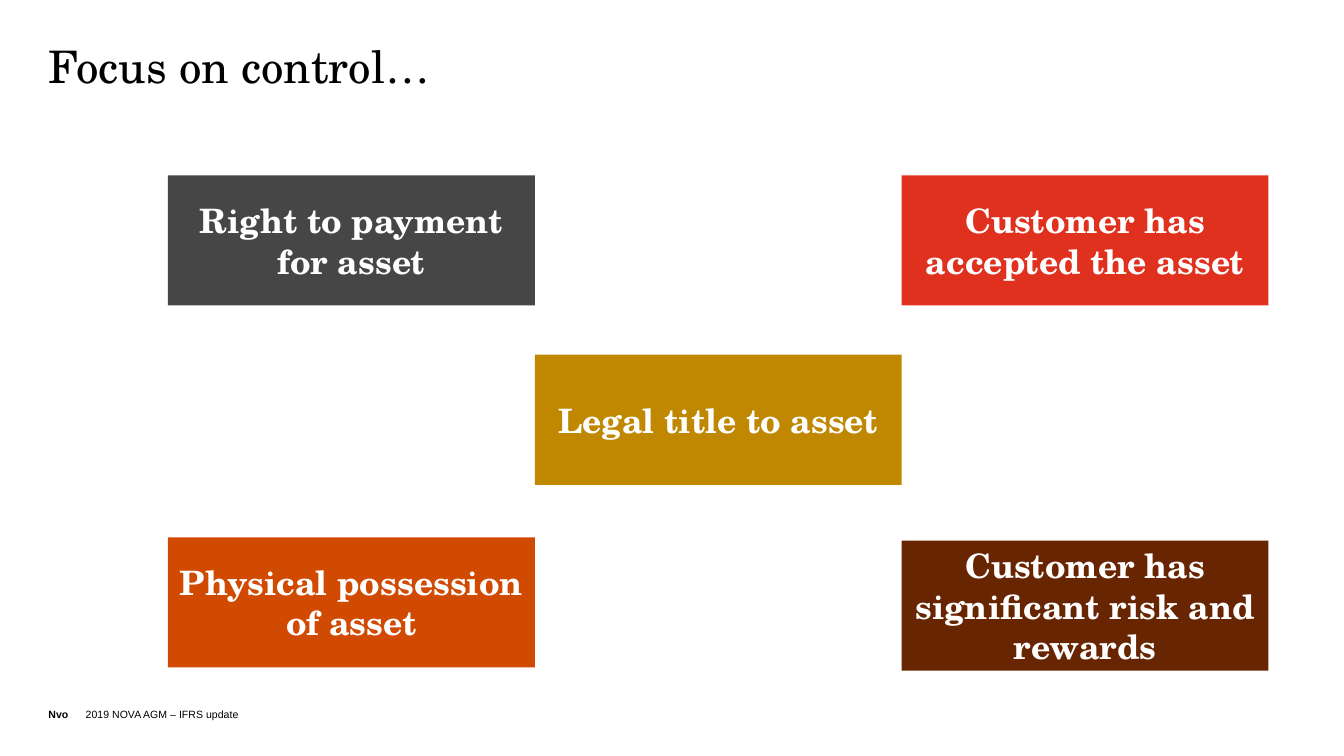
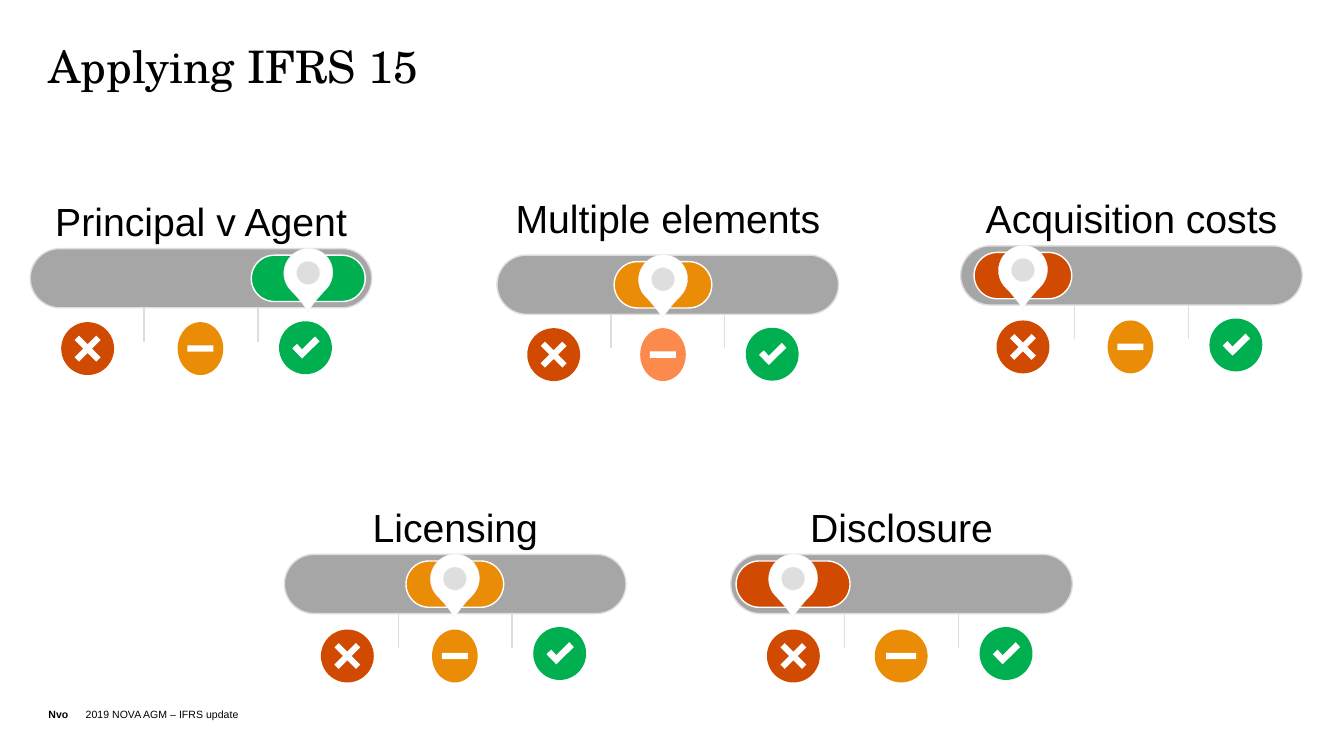
from collections import namedtuple
from dataclasses import dataclass

from lxml import etree
from pptx import Presentation
from pptx.dml.color import RGBColor
from pptx.enum.shapes import MSO_CONNECTOR as Connector, MSO_SHAPE as Shape
from pptx.enum.text import MSO_ANCHOR as Anchor, MSO_AUTO_SIZE as AutoSize, PP_ALIGN as Align
from pptx.oxml.ns import qn
from pptx.util import Pt


@dataclass(frozen=True)
class Theme:
    serif: str = "TeX Gyre Schola"
    sans: str = "Arial"
    title_size: float = 32
    label_size: float = 28
    box_size: float = 24
    footer_size: float = 7.5
    black: str = "000000"
    white: str = "FFFFFF"
    charcoal: str = "464646"
    track: str = "A6A6A6"
    hairline: str = "DEDEDE"
    pin_edge: str = "F2F2F2"
    gold: str = "BF8800"
    orange: str = "D04A02"
    brown: str = "682501"
    red: str = "E0301E"
    amber: str = "EB8C06"
    peach: str = "FD8A4D"
    green: str = "00B050"


theme = Theme()


def write(shape, text, size, font=theme.sans, color=theme.black, bold=False, align=Align.LEFT,
          anchor=Anchor.TOP, margins=(0, 0), wrap=True, auto_size=AutoSize.NONE,
          line_spacing=None, space_after=0):
    frame = shape.text_frame
    frame.word_wrap = wrap
    frame.auto_size = auto_size
    frame.vertical_anchor = anchor
    frame.margin_left = frame.margin_right = Pt(margins[0])
    frame.margin_top = frame.margin_bottom = Pt(margins[1])
    paragraph = frame.paragraphs[0]
    paragraph.alignment = align
    paragraph.line_spacing = line_spacing
    paragraph.space_after = Pt(space_after)
    run = paragraph.add_run()
    run.text = text
    run.font.name = font
    run.font.size = Pt(size)
    run.font.bold = bold
    run.font.color.rgb = RGBColor.from_string(color)


def paint(shape, fill, line=None, weight=1):
    shape.shadow.inherit = False
    shape.fill.solid()
    shape.fill.fore_color.rgb = RGBColor.from_string(fill)
    if line:
        shape.line.color.rgb = RGBColor.from_string(line)
        shape.line.width = Pt(weight)
    else:
        shape.line.fill.background()


presentation = Presentation()
presentation.slide_width = Pt(960)
presentation.slide_height = Pt(540)
layout = presentation.slide_layouts[5]

for placeholder in list(layout.placeholders):
    if placeholder.placeholder_format.idx == 0:
        placeholder.left, placeholder.top = Pt(34.6), Pt(33.8)
        placeholder.width, placeholder.height = Pt(890), Pt(109.4)
    else:
        layout.shapes.element.remove(placeholder.element)

control_slide, applying_slide = [presentation.slides.add_slide(layout) for _ in range(2)]
for slide, title in ((control_slide, "Focus on control…"), (applying_slide, "Applying IFRS 15")):
    write(slide.shapes.title, title, theme.title_size, font=theme.serif, line_spacing=0.85)

footers = []
for text, left, width, bold in (("Nvo", 34.6, 24, True),
                                ("2019 NOVA AGM – IFRS update", 61.2, 404.6, False)):
    footer = control_slide.shapes.add_textbox(Pt(left), Pt(504), Pt(width), Pt(10.8))
    write(footer, text, theme.footer_size, bold=bold, anchor=Anchor.BOTTOM)
    footers.append(footer)
for footer in footers:
    layout.shapes.element.append(footer.element)

BOX_LEFT, BOX_WIDTH, BOX_HEIGHT = 120, 262, 92.9
for text, column, top, fill in (
    ("Right to payment for asset", 0, 125.3, theme.charcoal),
    ("Legal title to asset", 1, 253.4, theme.gold),
    ("Physical possession of asset", 0, 383.8, theme.orange),
    ("Customer has significant risk and rewards", 2, 386.2, theme.brown),
    ("Customer has accepted the asset", 2, 125.3, theme.red),
):
    box = control_slide.shapes.add_shape(
        Shape.RECTANGLE, Pt(BOX_LEFT + column * BOX_WIDTH), Pt(top), Pt(BOX_WIDTH), Pt(BOX_HEIGHT))
    paint(box, fill)
    write(box, text, theme.box_size, font=theme.serif, color=theme.white, bold=True,
          align=Align.CENTER, anchor=Anchor.MIDDLE, margins=(7.2, 3.6))

TRACK_WIDTH, TRACK_HEIGHT = 244, 42.3
DIVIDER_LENGTH = 24.3
KNOB_INSET, KNOB_HEIGHT = 4.7, 33.1
PIN_WIDTH, PIN_HEIGHT, PIN_DOT = 35.3, 34.6, 16.6
ICON_DIAMETER, NARROW_ICON = 37.8, 32.6
CROSS_SIZE, DASH_RATIO, DASH_HEIGHT = 21.8, 0.57, 4.6
TICK_X, TICK_DROP = 196.6, 70.8
TICK_OUTLINE = ((-2.4, 7.7), (-9.4, 0.5), (-6, -2.8), (-2.4, 1.2), (6.9, -8.1), (10.1, -4.6))

Slider = namedtuple("Slider", "label left top label_rise cross_x dash_x icon_drop "
                              "knob_x knob_width knob_fill dash_width dash_fill")
sliders = (
    Slider("Principal v Agent", 21.6, 177.6, 36.6, 41, 121.6, 71.4,
           198.6, 81.4, theme.green, NARROW_ICON, theme.amber),
    Slider("Acquisition costs", 686.2, 175.6, 36.6, 44.5, 121.3, 72.2,
           44.5, 69.8, theme.orange, NARROW_ICON, theme.amber),
    Slider("Disclosure", 522, 396, 36.6, 44.7, 121.7, 72.6,
           44.5, 81.4, theme.orange, ICON_DIAMETER, theme.amber),
    Slider("Multiple elements", 355, 182.2, 43.2, 40.5, 118.6, 71.1,
           118.6, 69.8, theme.amber, NARROW_ICON, theme.peach),
    Slider("Licensing", 203.2, 396, 36.6, 44.9, 121.7, 72.6,
           121.7, 69.8, theme.amber, NARROW_ICON, theme.amber),
)

shapes = applying_slide.shapes
for slider in sliders:
    scale_group = shapes.add_group_shape().shapes
    track = scale_group.add_shape(Shape.ROUNDED_RECTANGLE, Pt(slider.left), Pt(slider.top),
                                  Pt(TRACK_WIDTH), Pt(TRACK_HEIGHT))
    track.adjustments[0] = 0.5
    paint(track, theme.track, theme.hairline)
    for third in (1, 2):
        x = Pt(slider.left + third * TRACK_WIDTH / 3)
        bottom = slider.top + TRACK_HEIGHT
        divider = scale_group.add_connector(Connector.STRAIGHT, x, Pt(bottom),
                                            x, Pt(bottom + DIVIDER_LENGTH))
        divider.line.color.rgb = RGBColor.from_string(theme.hairline)
        divider.line.width = Pt(1)
        etree.SubElement(divider.element.spPr, qn("a:effectLst"))

    knob_center = slider.left + slider.knob_x
    knob = shapes.add_shape(Shape.ROUNDED_RECTANGLE, Pt(knob_center - slider.knob_width / 2),
                            Pt(slider.top + KNOB_INSET), Pt(slider.knob_width), Pt(KNOB_HEIGHT))
    knob.adjustments[0] = 0.5
    paint(knob, slider.knob_fill, theme.white)

    pin_group = shapes.add_group_shape().shapes
    pin = pin_group.add_shape(Shape.TEAR, Pt(knob_center - PIN_WIDTH / 2), Pt(slider.top),
                              Pt(PIN_WIDTH), Pt(PIN_HEIGHT))
    pin.adjustments[0] = 1.118
    pin.rotation = 135
    paint(pin, theme.white, theme.pin_edge, 0.25)
    dot = pin_group.add_shape(Shape.OVAL, Pt(knob_center - PIN_DOT / 2),
                              Pt(slider.top + (PIN_HEIGHT - PIN_DOT) / 2), Pt(PIN_DOT), Pt(PIN_DOT))
    paint(dot, theme.hairline, theme.pin_edge, 0.25)

    for kind, offset, drop, width, fill in (
        ("cross", slider.cross_x, slider.icon_drop, ICON_DIAMETER, theme.orange),
        ("dash", slider.dash_x, slider.icon_drop, slider.dash_width, slider.dash_fill),
        ("tick", TICK_X, TICK_DROP, ICON_DIAMETER, theme.green),
    ):
        center_x, center_y = slider.left + offset, slider.top + drop
        icon = shapes.add_group_shape().shapes
        disc = icon.add_shape(Shape.OVAL, Pt(center_x - width / 2),
                              Pt(center_y - ICON_DIAMETER / 2), Pt(width), Pt(ICON_DIAMETER))
        paint(disc, fill)
        if kind == "cross":
            glyph = icon.add_shape(Shape.CROSS, Pt(center_x - CROSS_SIZE / 2),
                                   Pt(center_y - CROSS_SIZE / 2), Pt(CROSS_SIZE), Pt(CROSS_SIZE))
            glyph.adjustments[0] = 0.4
            glyph.rotation = 45
        elif kind == "dash":
            dash_length = width * DASH_RATIO
            glyph = icon.add_shape(Shape.RECTANGLE, Pt(center_x - dash_length / 2),
                                   Pt(center_y - DASH_HEIGHT / 2), Pt(dash_length), Pt(DASH_HEIGHT))
        else:
            points = [(Pt(center_x + x), Pt(center_y + y)) for x, y in TICK_OUTLINE]
            builder = icon.build_freeform(*points[0], scale=1.0)
            builder.add_line_segments(points[1:], close=True)
            glyph = builder.convert_to_shape()
        paint(glyph, theme.white)

    label = shapes.add_textbox(Pt(slider.left), Pt(slider.top - slider.label_rise),
                               Pt(TRACK_WIDTH), Pt(33.8))
    write(label, slider.label, theme.label_size, align=Align.CENTER, space_after=6,
          auto_size=AutoSize.SHAPE_TO_FIT_TEXT)

presentation.save("out.pptx")
